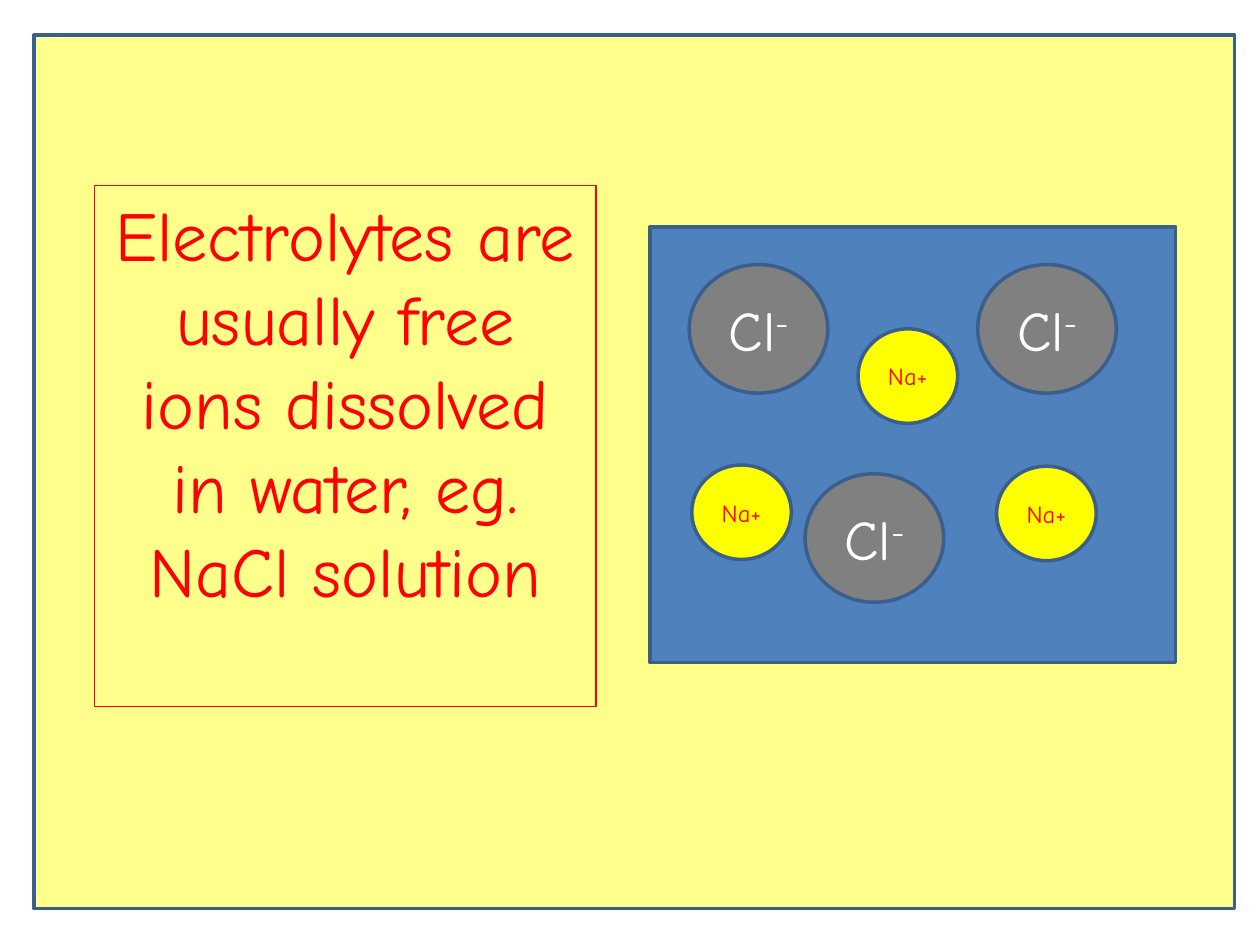
from pptx import Presentation, util as u
from pptx.dml.color import RGBColor
from pptx.enum import shapes, text

COLORS = {"paper": "FFFF8B", "edge": "3A5F8C", "red": "FF0000", "water": "4F81BD",
          "chloride": "808080", "sodium": "FFFF00", "white": "FFFFFF"}
FONT = "Comic Neue"

prs = Presentation()
prs.slide_width, prs.slide_height = u.Inches(10), u.Inches(7.5)
s = prs.slides.add_slide(prs.slide_layouts[6])

# Grid of 100 columns by 75 rows
COL, ROW = prs.slide_width / 100, prs.slide_height / 75


def add_box(kind, left, top, width, height, fill=None, line="edge", weight=2):
    sp = s.shapes.add_shape(kind, round(left * COL), round(top * ROW),
                            round(width * COL), round(height * ROW))
    sp.shadow.inherit = False
    if fill:
        sp.fill.solid()
        sp.fill.fore_color.rgb = RGBColor.from_string(COLORS[fill])
    else:
        sp.fill.background()
    sp.line.color.rgb = RGBColor.from_string(COLORS[line])
    sp.line.width = u.Pt(weight)
    return sp


def add_text(sp, words, size, color, anchor=text.MSO_ANCHOR.MIDDLE, superscript=""):
    tf = sp.text_frame
    tf.word_wrap = True
    tf.vertical_anchor = anchor
    p = tf.paragraphs[0]
    p.alignment = text.PP_ALIGN.CENTER
    for part in filter(None, (words, superscript)):
        r = p.add_run()
        r.text = part
        r.font.name, r.font.size = FONT, u.Pt(size)
        r.font.color.rgb = RGBColor.from_string(COLORS[color])
    if superscript:
        r._r.get_or_add_rPr().set("baseline", "30000")


RECT, OVAL = shapes.MSO_SHAPE.RECTANGLE, shapes.MSO_SHAPE.OVAL

# Page panel
add_box(RECT, 2.7, 2.8, 95.3, 69.3, "paper")

# Statement
statement = add_box(RECT, 7.5, 14.7, 39.8, 41.4, line="red", weight=0.75)
add_text(statement, "Electrolytes are usually free ions dissolved in water, eg. NaCl solution",
         40, "red", anchor=text.MSO_ANCHOR.TOP)

# Water
add_box(RECT, 51.6, 18, 41.7, 34.6, "water")

# Chloride ions
for left, top in [(54.7, 21), (77.6, 21), (63.9, 37.6)]:
    add_text(add_box(OVAL, left, top, 11, 10.2, "chloride"), "Cl", 32, "white", superscript="-")

# Sodium ions
for left, top in [(68.1, 26.1), (79.1, 37), (54.9, 36.9)]:
    add_text(add_box(OVAL, left, top, 7.9, 7.5, "sodium"), "Na+", 14, "red")

prs.save("out.pptx")
